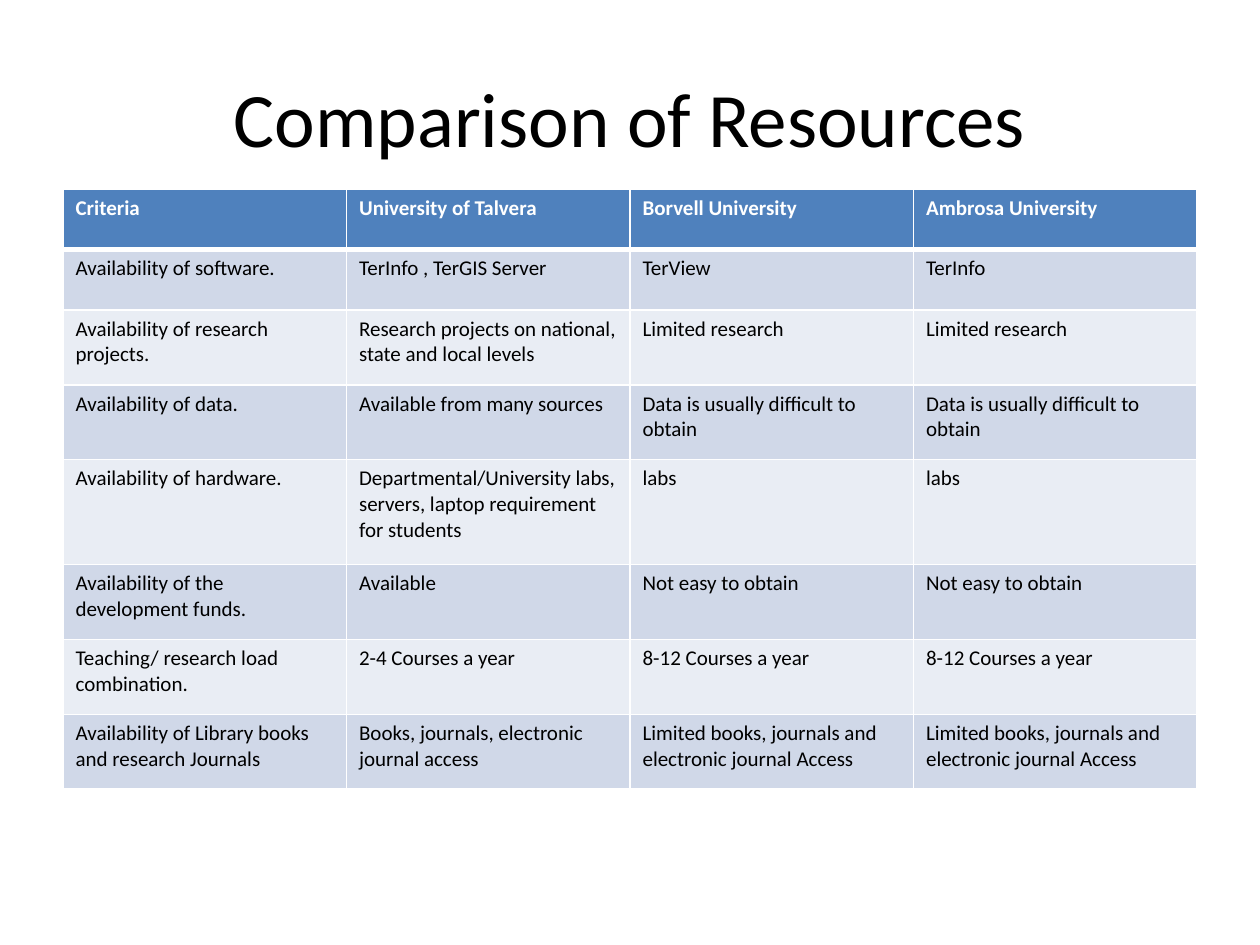
from pptx import Presentation
from pptx.dml.color import RGBColor as Color
from pptx.enum.text import MSO_ANCHOR as Anchor, PP_ALIGN as Align
from pptx.oxml import parse_xml
from pptx.oxml.ns import nsdecls
from pptx.util import Pt

COLORS = {
    "header": "4F81BD",
    "odd": "D0D8E8",
    "even": "E9EDF4",
    "white": "FFFFFF",
    "black": "000000",
}

ROW_HEIGHTS = [34.56, 34.56, 42.8, 42.8, 60, 42.8, 42.8, 42.8]
COLUMN_WIDTH = 162
RESOURCES = [
    ["Criteria", "University of Talvera", "Borvell University", "Ambrosa University"],
    ["Availability of software.", "TerInfo , TerGIS Server", "TerView", "TerInfo"],
    ["Availability of research projects.",
     "Research projects on national, state and local levels",
     "Limited research", "Limited research"],
    ["Availability of data.", "Available from many sources",
     "Data is usually difficult to obtain", "Data is usually difficult to obtain"],
    ["Availability of hardware.",
     "Departmental/University labs, servers, laptop requirement for students",
     "labs", "labs"],
    ["Availability of the development funds.", "Available",
     "Not easy to obtain", "Not easy to obtain"],
    ["Teaching/ research load combination.", "2-4 Courses a year",
     "8-12 Courses a year", "8-12 Courses a year"],
    ["Availability of Library books and research Journals",
     "Books, journals, electronic journal access",
     "Limited books, journals and electronic journal Access",
     "Limited books, journals and electronic journal Access"],
]


class SlideBuilder:
    font = "Calibri"
    title_size = 44
    table_size = 12

    def __init__(self, deck):
        self.slide = deck.slides.add_slide(deck.slide_layouts[5])

    def format_runs(self, frame, size, color, bold=False):
        for para in frame.paragraphs:
            for span in para.runs:
                span.font.name = self.font
                span.font.size = Pt(size)
                span.font.bold = bold
                span.font.color.rgb = Color.from_string(COLORS[color])

    def title(self, text, left, top, width, height):
        box = self.slide.shapes.title
        box.left, box.top, box.width, box.height = map(Pt, (left, top, width, height))
        frame = box.text_frame
        frame.text = text
        frame.vertical_anchor = Anchor.MIDDLE
        frame.paragraphs[0].alignment = Align.CENTER
        self.format_runs(frame, self.title_size, "black")

    def borders(self, cell, widths):
        properties = cell._tc.get_or_add_tcPr()
        for side, width in widths.items():
            properties.append(parse_xml(
                f'<a:ln{side} {nsdecls("a")} w="{Pt(width)}"><a:solidFill>'
                f'<a:srgbClr val="{COLORS["white"]}"/></a:solidFill></a:ln{side}>'))

    def table(self, rows, left, top, column_width, row_heights):
        columns = len(rows[0])
        table = self.slide.shapes.add_table(
            len(rows), columns, Pt(left), Pt(top),
            Pt(column_width * columns), Pt(sum(row_heights))).table
        for column in table.columns:
            column.width = Pt(column_width)
        for index, (texts, height) in enumerate(zip(rows, row_heights)):
            table.rows[index].height = Pt(height)
            header = index == 0
            fill = "header" if header else ("even", "odd")[index % 2]
            widths = {"L": 1, "R": 1, "T": 3 if index == 1 else 1, "B": 3 if header else 1}
            for cell, text in zip(table.rows[index].cells, texts):
                cell.text_frame.text = text
                self.format_runs(cell.text_frame, self.table_size,
                                 "white" if header else "black", header)
                self.borders(cell, widths)
                cell.fill.solid()
                cell.fill.fore_color.rgb = Color.from_string(COLORS[fill])


def main():
    deck = Presentation()
    deck.slide_width, deck.slide_height = Pt(720), Pt(540)
    page = SlideBuilder(deck)
    page.title("Comparison of Resources", 36, 21.6, 648, 90)
    page.table(RESOURCES, 36, 108, COLUMN_WIDTH, ROW_HEIGHTS)
    deck.save("out.pptx")


if __name__ == "__main__":
    main()
